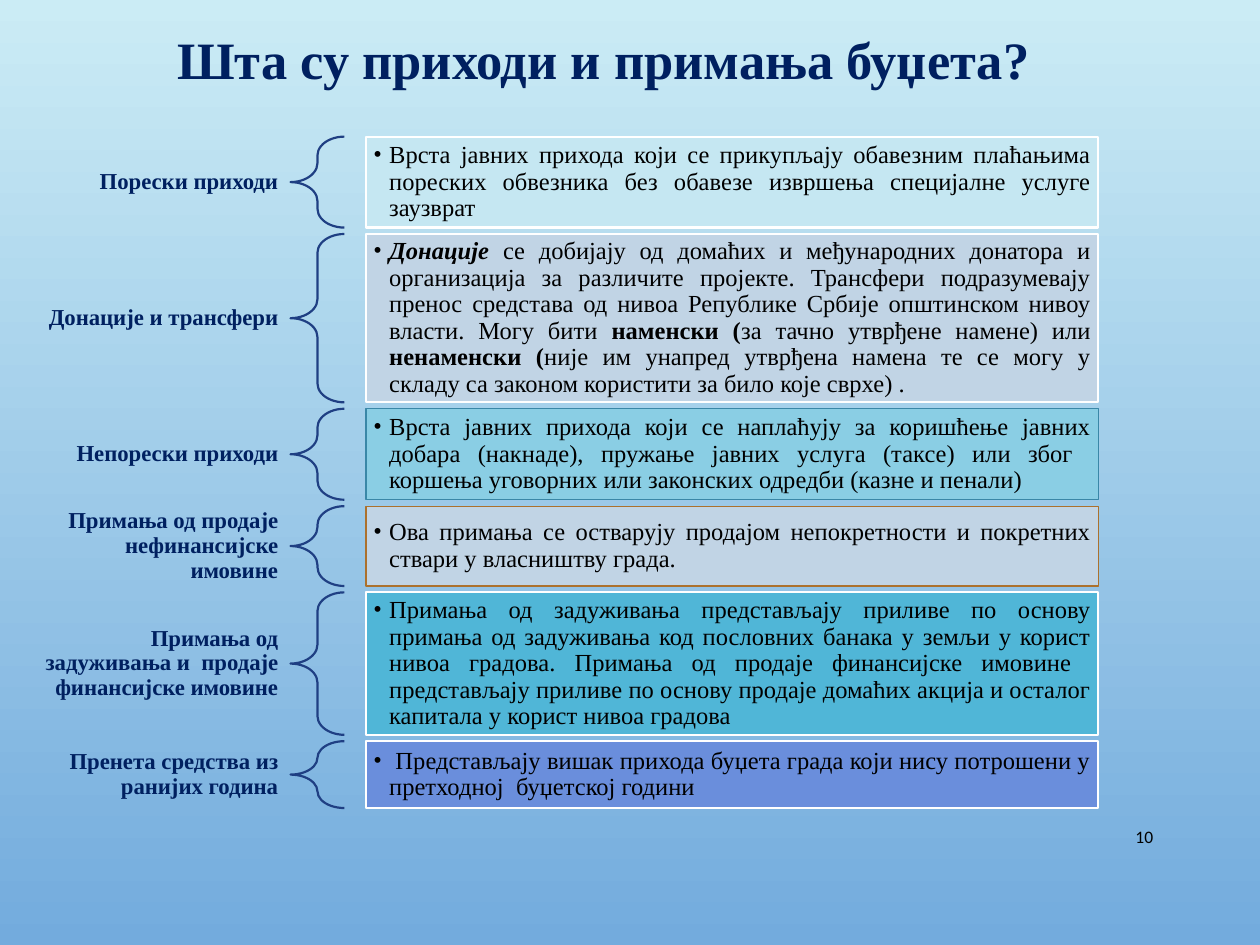
"""Build the slide that explains budget revenues and receipts."""
from lxml.etree import SubElement
from pptx import Presentation
from pptx.dml.color import RGBColor
from pptx.enum.shapes import MSO_SHAPE as Shape
from pptx.enum.text import MSO_ANCHOR as Anchor, PP_ALIGN as Align
from pptx.oxml.ns import qn
from pptx.util import Pt

SERIF = "Times New Roman"
NAVY = "002060"
BLACK = "000000"


def color(value):
    return RGBColor.from_string(value)


def write(shape, runs, size, ink, align, anchor, margins, font=SERIF, spacing=1.0, bullet=False):
    frame = shape.text_frame
    frame.word_wrap = True
    frame.vertical_anchor = anchor
    frame.margin_left = frame.margin_right = Pt(margins[0])
    frame.margin_top = frame.margin_bottom = Pt(margins[1])
    paragraph = frame.paragraphs[0]
    paragraph.alignment = align
    paragraph.line_spacing = spacing
    if bullet:
        paragraph.level = 1
        properties = paragraph._p.get_or_add_pPr()
        properties.set("marL", str(Pt(9)))
        properties.set("indent", str(-Pt(9)))
        SubElement(properties, qn("a:buFont")).set("typeface", font)
        SubElement(properties, qn("a:buChar")).set("char", "•")
    paragraph.font.size = Pt(size)
    for text, style in runs:
        run = paragraph.add_run()
        run.text = text
        run.font.name = font
        run.font.size = Pt(size)
        run.font.bold = "b" in style
        run.font.italic = "i" in style
        run.font.color.rgb = color(ink)


presentation = Presentation()
presentation.slide_width = Pt(720)
presentation.slide_height = Pt(540)
slide = presentation.slides.add_slide(presentation.slide_layouts[6])

background = slide.background.fill
background.gradient()
background.gradient_angle = 270
for stop, value in zip(background.gradient_stops, ("CBECF5", "73ABDD")):
    stop.color.rgb = color(value)

rows = [
    ("Порески приходи", 20.2, 52, "C5E7F2", "FFFFFF", 1.25, [
        ("Врста јавних прихода који се прикупљају обавезним плаћањима пореских "
         "обвезника без обавезе извршења специјалне услуге заузврат", "")]),
    ("Донације и трансфери", 20.2, 96.2, "C1D4E5", "FFFFFF", 1.25, [
        ("Донације ", "bi"),
        ("се добијају од домаћих и међународних донатора и организација за различите "
         "пројекте. Трансфери подразумевају пренос средстава од нивоа Републике Србије "
         "општинском нивоу власти. Могу бити ", ""),
        ("наменски (", "b"),
        ("за тачно утврђене намене) или ", ""),
        ("ненаменски (", "b"),
        ("није им унапред утврђена намена те се могу у складу са законом користити "
         "за било које сврхе) .", "")]),
    ("Непорески приходи", 20.2, 52, "8ACEE4", "3A87A7", 0.75, [
        ("Врста јавних прихода који се наплаћују за коришћење јавних добара (накнаде), "
         "пружање јавних услуга (таксе) или због  коршења уговорних или законских "
         "одредби (казне и пенали)", "")]),
    ("Примања од продаје нефинансијске имовине", 45.4, 45.6, "C1D4E5", "AC712D", 0.75, [
        ("Ова примања се остварују продајом непокретности и покретних ствари у "
         "власништву града.", "")]),
    ("Примања од задуживања и  продаје финансијске имовине", 45.4, 81.4,
     "50B6D7", "FFFFFF", 1.25, [
        ("Примања од задуживања представљају приливе по основу примања од задуживања "
         "код пословних банака у земљи у корист нивоа градова. Примања од продаје "
         "финансијске имовине  представљају приливе по основу продаје домаћих акција "
         "и осталог капитала у корист нивоа градова", "")]),
    ("Пренета средства из ранијих година", 32.4, 38.2, "6A8EDC", "FFFFFF", 1.25, [
        (" Представљају вишак прихода буџета града који нису потрошени у претходној  "
         "буџетској години", "")]),
]

top = 78.1
gap = 3.65
for name, label_height, height, fill, outline, weight, runs in rows:
    label_top = top + (height - label_height) / 2
    label = slide.shapes.add_textbox(Pt(11.9), Pt(label_top), Pt(154), Pt(label_height))
    write(label, [(name, "b")], 13, NAVY, Align.RIGHT, Anchor.MIDDLE, (7.2, 2.6), spacing=0.9)

    brace = slide.shapes.add_shape(Shape.LEFT_BRACE, Pt(166), Pt(top), Pt(30.8), Pt(height))
    brace.shadow.inherit = False
    brace.adjustments[0] = 0.35
    brace.adjustments[1] = 0.5
    brace.fill.background()
    brace.line.color.rgb = color("1F3F83")
    brace.line.width = Pt(1.25)

    box = slide.shapes.add_shape(Shape.RECTANGLE, Pt(209.2), Pt(top), Pt(418.4), Pt(height))
    box.shadow.inherit = False
    box.fill.solid()
    box.fill.fore_color.rgb = color(fill)
    box.line.color.rgb = color(outline)
    box.line.width = Pt(weight)
    write(box, runs, 14, BLACK, Align.JUSTIFY, Anchor.MIDDLE, (4.2, 4.2),
          spacing=0.9, bullet=True)
    top += height + gap

number = slide.shapes.add_textbox(Pt(620.6), Pt(463.4), Pt(45.4), Pt(28.8))
write(number, [("10", "")], 10, BLACK, Align.RIGHT, Anchor.MIDDLE, (7.2, 3.6), font="Calibri")

title = slide.shapes.add_textbox(Pt(41.8), Pt(11.8), Pt(606.2), Pt(43.9))
write(title, [("Шта су приходи и примања буџета?", "b")], 30, NAVY,
      Align.CENTER, Anchor.TOP, (7.2, 3.6))

presentation.save("out.pptx")
